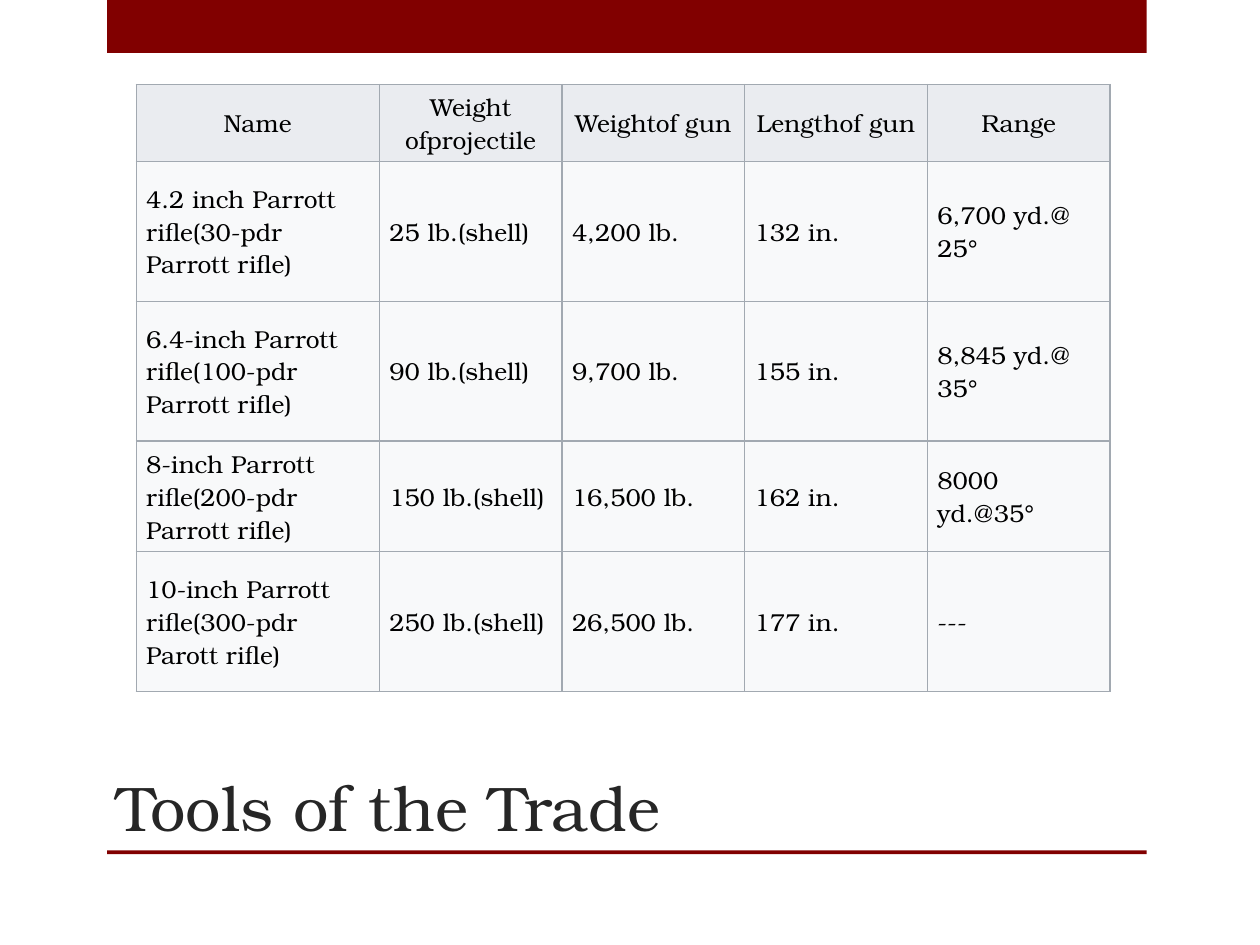
from lxml import etree
from pptx import Presentation
from pptx.dml.color import RGBColor
from pptx.enum.shapes import MSO_SHAPE
from pptx.enum.text import MSO_ANCHOR as ANCHOR, PP_ALIGN as ALIGN
from pptx.oxml.ns import qn
from pptx.util import Inches, Pt

MAROON = RGBColor(0x81, 0x00, 0x00)
CHARCOAL = RGBColor(0x26, 0x26, 0x26)
BLACK = RGBColor(0x00, 0x00, 0x00)
HEADER_FILL = RGBColor(0xEA, 0xEC, 0xF0)
BODY_FILL = RGBColor(0xF8, 0xF9, 0xFA)
BORDER = RGBColor(0xA2, 0xA9, 0xB1)
FONT = "TeX Gyre Bonum"

COL_WIDTHS = [1.93] + [1.45] * 4
ROW_HEIGHTS = [0.61, 1.11, 1.11, 0.88, 1.11]
GUNS = [
    ["Name", "Weight ofprojectile", "Weightof gun", "Lengthof gun", "Range"],
    ["4.2 inch Parrott rifle(30-pdr Parrott rifle)", "25 lb.(shell)",
     "4,200 lb.", "132 in.", "6,700 yd.@ 25°"],
    ["6.4-inch Parrott rifle(100-pdr Parrott rifle)", "90 lb.(shell)",
     "9,700 lb.", "155 in.", "8,845 yd.@ 35°"],
    ["8-inch Parrott rifle(200-pdr Parrott rifle)", "150 lb.(shell)",
     "16,500 lb.", "162 in.", "8000 yd.@35°"],
    ["10-inch Parrott rifle(300-pdr Parott rifle)", "250 lb.(shell)",
     "26,500 lb.", "177 in.", "---"],
]


def add_band(s, x, y, w, h):
    """Draw a solid maroon band filling the given box."""
    sp = s.shapes.add_shape(MSO_SHAPE.RECTANGLE, Inches(x), Inches(y), Inches(w), Inches(h))
    sp.shadow.inherit = False
    sp.fill.solid()
    sp.fill.fore_color.rgb = MAROON
    sp.line.fill.background()


def write_text(tf, text, size, color, align):
    """Put one formatted run into the first paragraph."""
    p = tf.paragraphs[0]
    p.alignment = align
    r = p.add_run()
    r.text = text
    for name, value in {"name": FONT, "size": Pt(size)}.items():
        setattr(r.font, name, value)
    r.font.color.rgb = color


def add_title(s, x, y, w, h):
    """Place the slide title at the bottom of the given box."""
    tf = s.shapes.add_textbox(Inches(x), Inches(y), Inches(w), Inches(h)).text_frame
    for name, value in {"word_wrap": True, "vertical_anchor": ANCHOR.BOTTOM}.items():
        setattr(tf, name, value)
    write_text(tf, "Tools of the Trade", 36, CHARCOAL, ALIGN.LEFT)


def add_borders(cell):
    """Give a cell a thin grey line on all four sides."""
    tc_pr = cell._tc.get_or_add_tcPr()
    for i, side in enumerate(("a:lnL", "a:lnR", "a:lnT", "a:lnB")):
        ln = etree.Element(qn(side), w=str(Pt(0.75)))
        fill = etree.SubElement(ln, qn("a:solidFill"))
        etree.SubElement(fill, qn("a:srgbClr"), val=str(BORDER))
        tc_pr.insert(i, ln)


def format_cell(cell, text, is_header):
    """Fill, border and write one table cell."""
    layout = {
        "margin_left": Inches(0.08), "margin_right": Inches(0.08),
        "margin_top": Inches(0.04), "margin_bottom": Inches(0.04),
        "vertical_anchor": ANCHOR.MIDDLE,
    }
    for name, value in layout.items():
        setattr(cell, name, value)
    cell.fill.solid()
    cell.fill.fore_color.rgb = HEADER_FILL if is_header else BODY_FILL
    add_borders(cell)
    write_text(cell.text_frame, text, 14, BLACK, ALIGN.CENTER if is_header else ALIGN.LEFT)


def add_gun_table(s, x, y, w, h):
    """Build the table of guns in the given box."""
    table = s.shapes.add_table(
        len(GUNS), len(GUNS[0]), Inches(x), Inches(y), Inches(w), Inches(h)).table
    for col, width in zip(table.columns, COL_WIDTHS):
        col.width = Inches(width)
    for i, (row, height) in enumerate(zip(table.rows, ROW_HEIGHTS)):
        row.height = Inches(height)
        for cell, text in zip(row.cells, GUNS[i]):
            format_cell(cell, text, i == 0)


def main():
    """Build and save the slide."""
    prs = Presentation()
    prs.slide_width, prs.slide_height = Inches(10), Inches(7.5)
    s = prs.slides.add_slide(prs.slide_layouts[6])
    add_band(s, 0.85, 0, 8.25, 0.42)
    add_band(s, 0.85, 6.75, 8.25, 0.03)
    add_title(s, 0.83, 6, 7.42, 0.75)
    add_gun_table(s, 1.08, 0.67, sum(COL_WIDTHS), sum(ROW_HEIGHTS))
    prs.save("out.pptx")


if __name__ == "__main__":
    main()
